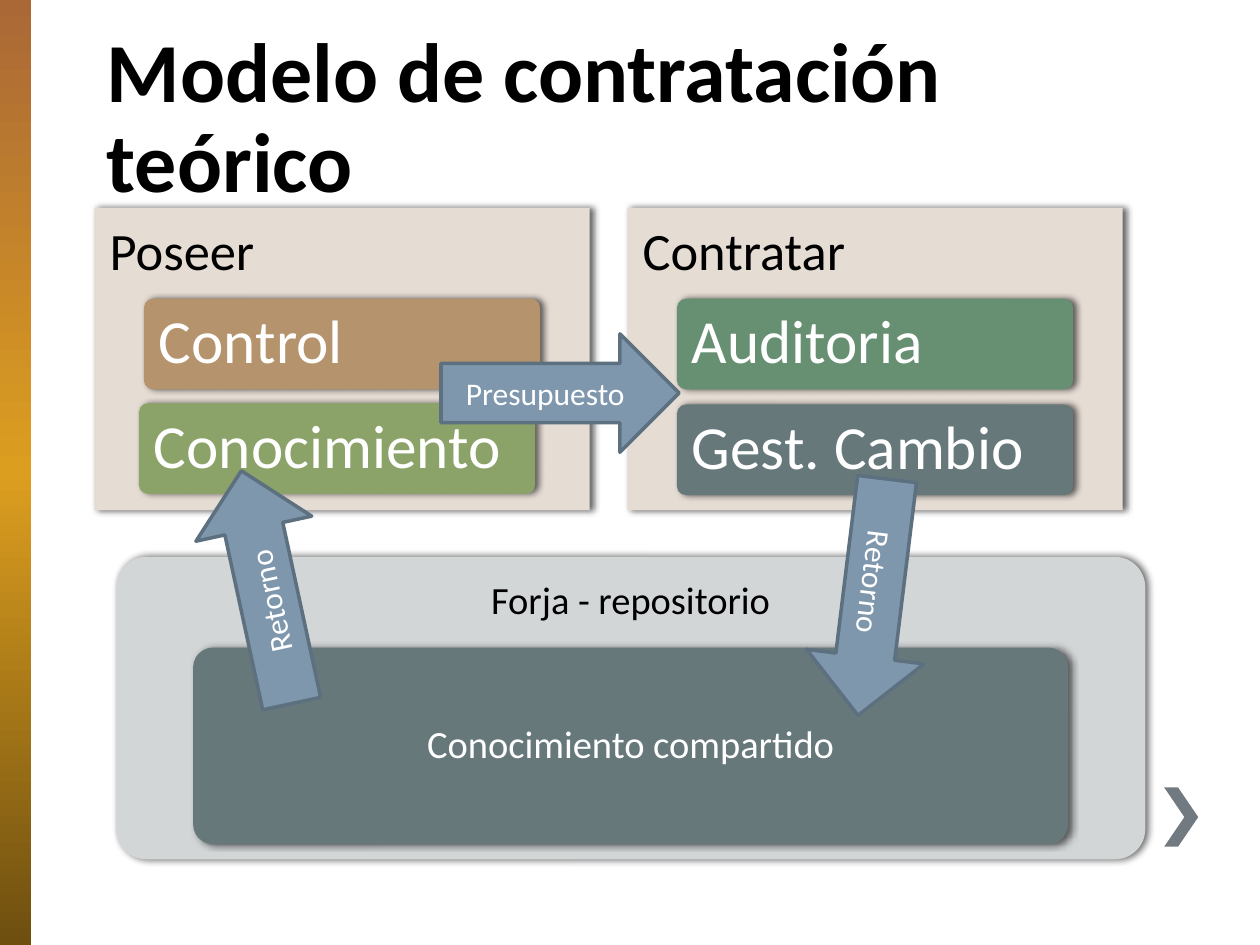
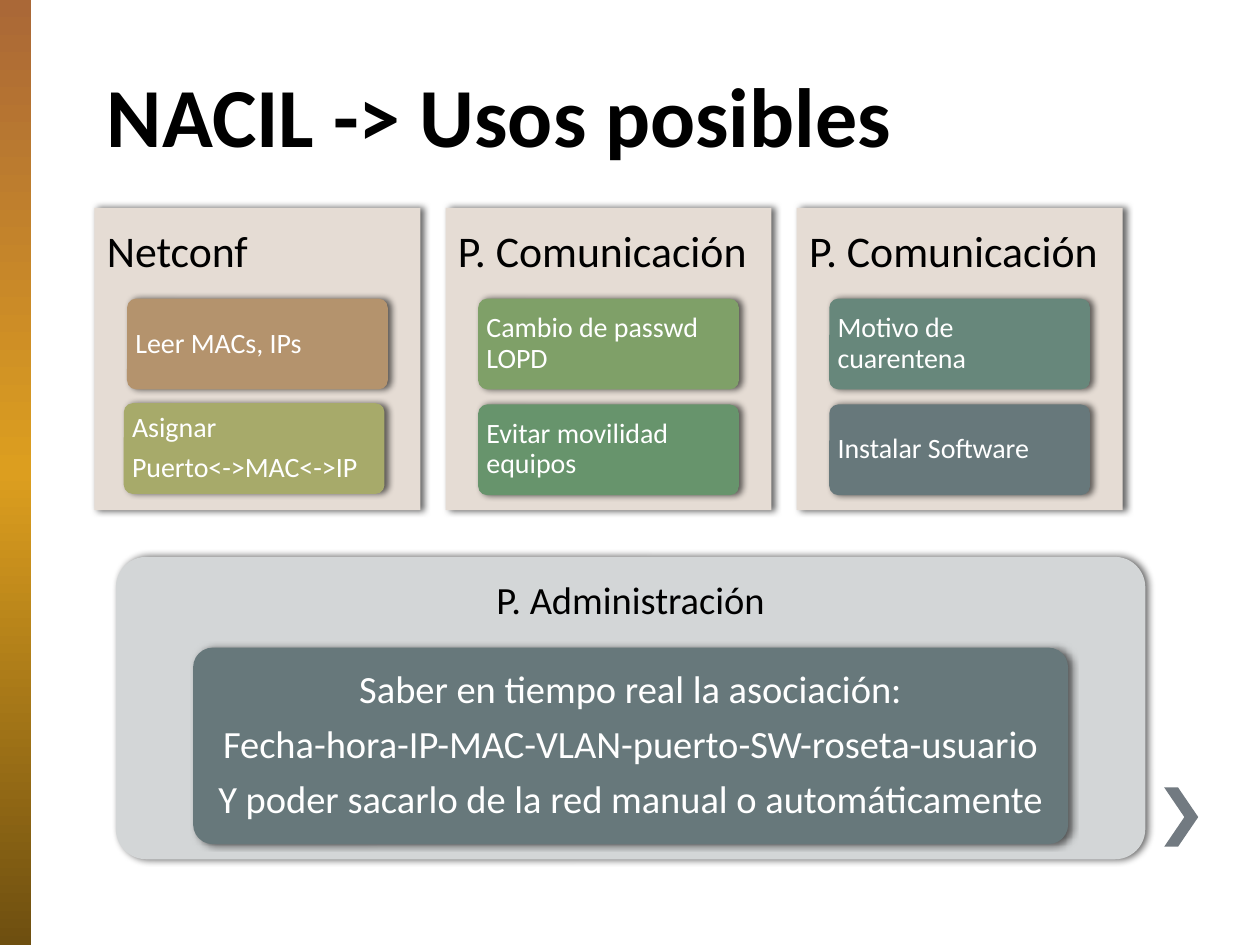
from lxml import etree
from pptx import Presentation
from pptx.dml.color import RGBColor
from pptx.enum.shapes import MSO_SHAPE as Preset
from pptx.enum.text import MSO_ANCHOR as Anchor, MSO_AUTO_SIZE as AutoSize, PP_ALIGN as Align
from pptx.oxml.ns import qn
from pptx.util import Inches, Pt

# Grid of 100 columns by 75 rows on a 10 x 7.5 inch slide
CELL = Inches(0.1)
COLUMNS, ROWS = 100, 75

# Shared colours
BLACK, WHITE = "000000", "FFFFFF"
SAND, SILVER, SLATE = "E5DCD4", "D3D6D7", "67787B"
STEEL, STEEL_EDGE, CHEVRON = "7E97AD", "5D7080", "727A81"
BAND_STOPS = [(0, "AA6837"), (50, "DC9E1F"), (100, "6E4F10")]

# Row of panels: left edge, top, total width, height of each
PANELS_LEFT, PANELS_TOP, PANELS_WIDTH, PANEL_HEIGHT = 7.5, 16.5, 81.6, 24
# Shares of a panel's height
HEADING, CARD, CARD_PITCH = 0.3, 0.3, 0.35


def rgb(colour):
    return RGBColor.from_string(colour)


def cells(*lengths):
    return [round(length * CELL) for length in lengths]


def add_colour(parent, colour):
    return etree.SubElement(parent, qn("a:srgbClr"), val=colour)


class Deck:
    """Holds the style and the current slide."""

    font = "Calibri"

    def __init__(self):
        self.presentation = Presentation()
        self.presentation.slide_width, self.presentation.slide_height = cells(COLUMNS, ROWS)
        self.slide = None

    def new_slide(self, title):
        self.slide = self.presentation.slides.add_slide(self.presentation.slide_layouts[6])
        self.band()
        self.chevron()
        self.label(title, (7.5, 3.3, 79.2, 12.5), 48, inset=(0.1, 0.05), bold=True)

    def band(self):
        band = self.shape(Preset.RECTANGLE, (0, 0, 2.5, ROWS), STEEL)
        properties = band.element.spPr
        solid = properties.find(qn("a:solidFill"))
        gradient = etree.Element(qn("a:gradFill"), rotWithShape="1")
        stops = etree.SubElement(gradient, qn("a:gsLst"))
        for percent, colour in BAND_STOPS:
            add_colour(etree.SubElement(stops, qn("a:gs"), pos=str(percent * 1000)), colour)
        etree.SubElement(gradient, qn("a:lin"), ang=str(90 * 60000), scaled="0")
        properties.replace(solid, gradient)

    def chevron(self):
        left, top, width, height, thickness = 92.4, 62.5, 2.7, 4.7, 1.1
        middle, right = top + height / 2, left + width
        points = [(left, top), (right - thickness, middle), (left, top + height),
                  (left + thickness, top + height), (right, middle)]
        builder = self.slide.shapes.build_freeform(*cells(left + thickness, top))
        builder.add_line_segments([cells(*point) for point in points], close=True)
        self.paint(builder.convert_to_shape(), CHEVRON)

    def paint(self, shape, fill, edge=None):
        shape.shadow.inherit = False
        shape.fill.solid()
        shape.fill.fore_color.rgb = rgb(fill)
        if edge:
            shape.line.color.rgb = rgb(edge)
            shape.line.width = Pt(2)
        else:
            shape.line.fill.background()

    def shape(self, preset, box, fill, edge=None):
        shape = self.slide.shapes.add_shape(preset, *cells(*box))
        self.paint(shape, fill, edge)
        if preset == Preset.ROUNDED_RECTANGLE:
            shape.adjustments[0] = 0.1
        return shape

    def raised(self, preset, box, fill):
        """A shape with a soft shadow to its right."""
        shape = self.shape(preset, box, fill)
        effects = shape.element.spPr.find(qn("a:effectLst"))
        shadow = etree.SubElement(effects, qn("a:outerShdw"), blurRad=str(Pt(4)),
                                  dist=str(Pt(2)), dir="0", rotWithShape="0")
        etree.SubElement(add_colour(shadow, BLACK), qn("a:alpha"), val="60000")
        return shape

    def set_text(self, shape, text, size, colour, align, inset, spacing=0.9, gap=0.35, bold=False):
        frame = shape.text_frame
        frame.word_wrap, frame.auto_size = True, AutoSize.NONE
        frame.vertical_anchor = Anchor.MIDDLE
        frame.margin_left = frame.margin_right = Inches(inset[0])
        frame.margin_top = frame.margin_bottom = Inches(inset[1])
        frame.text = text
        for paragraph in frame.paragraphs:
            paragraph.alignment = align
            paragraph.line_spacing = spacing
            paragraph.space_after = Pt(size * gap)
            font = paragraph.font
            font.name, font.size, font.bold = self.font, Pt(size), bold
            font.color.rgb = rgb(colour)

    def label(self, text, box, size, align=Align.LEFT, inset=None, bold=False):
        textbox = self.slide.shapes.add_textbox(*cells(*box))
        inset = inset or (size * 0.004, size * 0.004)
        self.set_text(textbox, text, size, BLACK, align, inset, bold=bold)

    def card(self, text, box, fill, size, align=Align.LEFT):
        card = self.raised(Preset.ROUNDED_RECTANGLE, box, fill)
        self.set_text(card, text, size, WHITE, align, (size * 0.0028, size * 0.002))

    def panels(self, panels, heading_size, card_size):
        """Equal panels side by side, each with a heading and two cards."""
        count = len(panels)
        gap = 6 / count
        width = (PANELS_WIDTH - gap * (count - 1)) / count
        for column, (heading, cards) in enumerate(panels):
            left = PANELS_LEFT + column * (width + gap)
            self.raised(Preset.RECTANGLE, (left, PANELS_TOP, width, PANEL_HEIGHT), SAND)
            self.label(heading, (left, PANELS_TOP, width, HEADING * PANEL_HEIGHT), heading_size)
            for row, (text, fill) in enumerate(cards):
                # The lower card of the first panel sits slightly up and left
                nudge = 1 if (column, row) == (0, 1) else 0
                top = PANELS_TOP + (HEADING + row * CARD_PITCH) * PANEL_HEIGHT - 0.1 * nudge
                box = (left + (0.1 - 0.01 * nudge) * width, top, 0.8 * width, CARD * PANEL_HEIGHT)
                self.card(text, box, fill, card_size)

    def base(self, heading, text):
        """The wide panel at the bottom with one card inside."""
        left, top, width, height, size = 9.2, 44.2, 81.7, 24, 22
        self.raised(Preset.ROUNDED_RECTANGLE, (left, top, width, height), SILVER)
        self.label(heading, (left, top, width, HEADING * height), size, Align.CENTER)
        box = (left + 0.075 * width, top + HEADING * height, 0.85 * width, 0.65 * height)
        self.card(text, box, SLATE, size, Align.CENTER)

    def arrow(self, text, left, top, rotation=0):
        arrow = self.shape(Preset.RIGHT_ARROW, (left, top, 18.9, 9.4), STEEL, STEEL_EDGE)
        arrow.rotation = rotation
        self.set_text(arrow, text, 18, WHITE, Align.CENTER, (0.1, 0.05), spacing=1.0, gap=0)


def main():
    deck = Deck()

    # Theoretical contracting model
    deck.new_slide("Modelo de contratación teórico")
    deck.panels([
        ("Poseer", [("Control", "B4936D"), ("Conocimiento", "8BA369")]),
        ("Contratar", [("Auditoria", "679072"), ("Gest. Cambio", SLATE)]),
    ], heading_size=30, card_size=35)
    deck.base("Forja - repositorio", "Conocimiento compartido")
    deck.arrow("Presupuesto", 35, 26.5)
    deck.arrow("Retorno", 59.8, 42.7, rotation=97)
    deck.arrow("Retorno", 11.7, 41.9, rotation=257.8)

    # Possible uses
    deck.new_slide("NACIL -> Usos posibles")
    deck.panels([
        ("Netconf", [("Leer MACs, IPs", "B4936D"),
                     ("Asignar\nPuerto<->MAC<->IP", "A7AA6A")]),
        ("P. Comunicación", [("Cambio de passwd LOPD", "7FA068"),
                             ("Evitar movilidad equipos", "67946C")]),
        ("P. Comunicación", [("Motivo de cuarentena", "67877B"),
                             ("Instalar Software", SLATE)]),
    ], heading_size=25, card_size=16)
    deck.base("P. Administración",
              "Saber en tiempo real la asociación:\n"
              "Fecha-hora-IP-MAC-VLAN-puerto-SW-roseta-usuario\n"
              "Y poder sacarlo de la red manual o automáticamente")

    deck.presentation.save("out.pptx")


if __name__ == "__main__":
    main()
